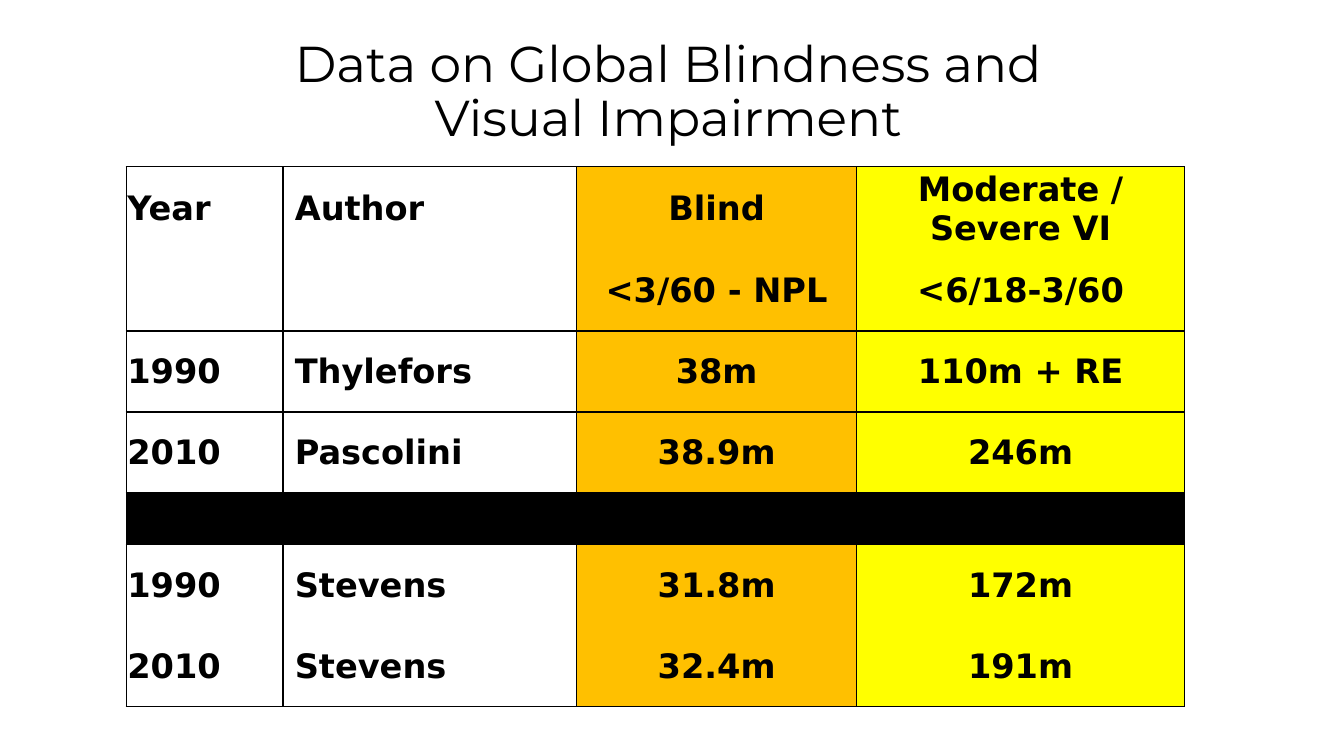
from lxml.etree import SubElement
from pptx import Presentation
from pptx.dml.color import RGBColor
from pptx.enum.text import MSO_ANCHOR, PP_ALIGN
from pptx.oxml.ns import qn
from pptx.util import Cm, Pt

BLACK, WHITE, ORANGE, YELLOW = "000000", "FFFFFF", "FFC000", "FFFF00"
COLUMN_WIDTHS = [3.95, 7.4, 7.06, 8.26]
COLUMN_FILLS = [WHITE, WHITE, ORANGE, YELLOW]
COLUMN_ALIGNS = [PP_ALIGN.LEFT, PP_ALIGN.LEFT, PP_ALIGN.CENTER, PP_ALIGN.CENTER]
COLUMN_INDENTS = [0, 0.27, 0, 0]
SURVEYS = [
    ["Year", "Author", "Blind", "Moderate /\nSevere VI"],
    ["", "", "<3/60 - NPL", "<6/18-3/60"],
    ["1990", "Thylefors", "38m", "110m + RE"],
    ["2010", "Pascolini", "38.9m", "246m"],
    ["", "", "", ""],
    ["1990", "Stevens", "31.8m", "172m"],
    ["2010", "Stevens", "32.4m", "191m"],
]
ROW_HEIGHTS = [2.1, 2.04, 2.04, 2.04, 1.3, 2.04, 2.04]
DIVIDER_ROW = 4
UNRULED_BELOW = {0, 5}


def color(value):
    return RGBColor.from_string(value)


class BlindnessSlide:
    """Builds the blindness data slide with one shared style."""

    def __init__(self):
        self.deck = Presentation()
        self.deck.slide_width, self.deck.slide_height = Cm(33.87), Cm(19.05)
        self.slide = self.deck.slides.add_slide(self.deck.slide_layouts[6])

    def style(self, paragraph, font, size, bold, align):
        paragraph.alignment = align
        for run in paragraph.runs:
            run.font.name = font
            run.font.size = Pt(size)
            run.font.bold = bold
            run.font.color.rgb = color(BLACK)

    def title(self, text, left, top, width, height):
        frame = self.slide.shapes.add_textbox(
            Cm(left), Cm(top), Cm(width), Cm(height)).text_frame
        frame.word_wrap = True
        frame.vertical_anchor = MSO_ANCHOR.MIDDLE
        frame.text = text
        heading = frame.paragraphs[0]
        heading.line_spacing = 0.9
        self.style(heading, "Montserrat", 36, False, PP_ALIGN.CENTER)

    def border(self, cell, side, ruled):
        line = SubElement(cell._tc.get_or_add_tcPr(), qn(f"a:ln{side}"), w=str(Pt(1)))
        if ruled:
            fill = SubElement(line, qn("a:solidFill"))
            SubElement(fill, qn("a:srgbClr"), val=BLACK)
        else:
            SubElement(line, qn("a:noFill"))

    def cell(self, cell, text, row, column):
        for side in "LR":
            self.border(cell, side, True)
        self.border(cell, "T", row - 1 not in UNRULED_BELOW)
        self.border(cell, "B", row not in UNRULED_BELOW)
        cell.fill.solid()
        cell.fill.fore_color.rgb = color(
            BLACK if row == DIVIDER_ROW else COLUMN_FILLS[column])
        cell.margin_left = cell.margin_right = cell.margin_top = Cm(0.03)
        cell.margin_bottom = 0
        cell.vertical_anchor = MSO_ANCHOR.MIDDLE
        cell.text_frame.text = text
        for paragraph in cell.text_frame.paragraphs:
            paragraph._p.get_or_add_pPr().set("marL", str(Cm(COLUMN_INDENTS[column])))
            self.style(paragraph, "DejaVu Sans", 24, True, COLUMN_ALIGNS[column])

    def table(self, left, top):
        table = self.slide.shapes.add_table(
            len(SURVEYS), len(COLUMN_WIDTHS), Cm(left), Cm(top),
            Cm(sum(COLUMN_WIDTHS)), Cm(sum(ROW_HEIGHTS))).table
        table.first_row = table.horz_banding = False
        for column, width in zip(table.columns, COLUMN_WIDTHS):
            column.width = Cm(width)
        for row, (survey, height) in enumerate(zip(SURVEYS, ROW_HEIGHTS)):
            table.rows[row].height = Cm(height)
            for column, text in enumerate(survey):
                self.cell(table.cell(row, column), text, row, column)


def main():
    page = BlindnessSlide()
    page.title("Data on Global Blindness and Visual Impairment", 5.18, 0.76, 23.32, 3.18)
    page.table(3.18, 4.2)
    page.deck.save("out.pptx")


if __name__ == "__main__":
    main()
